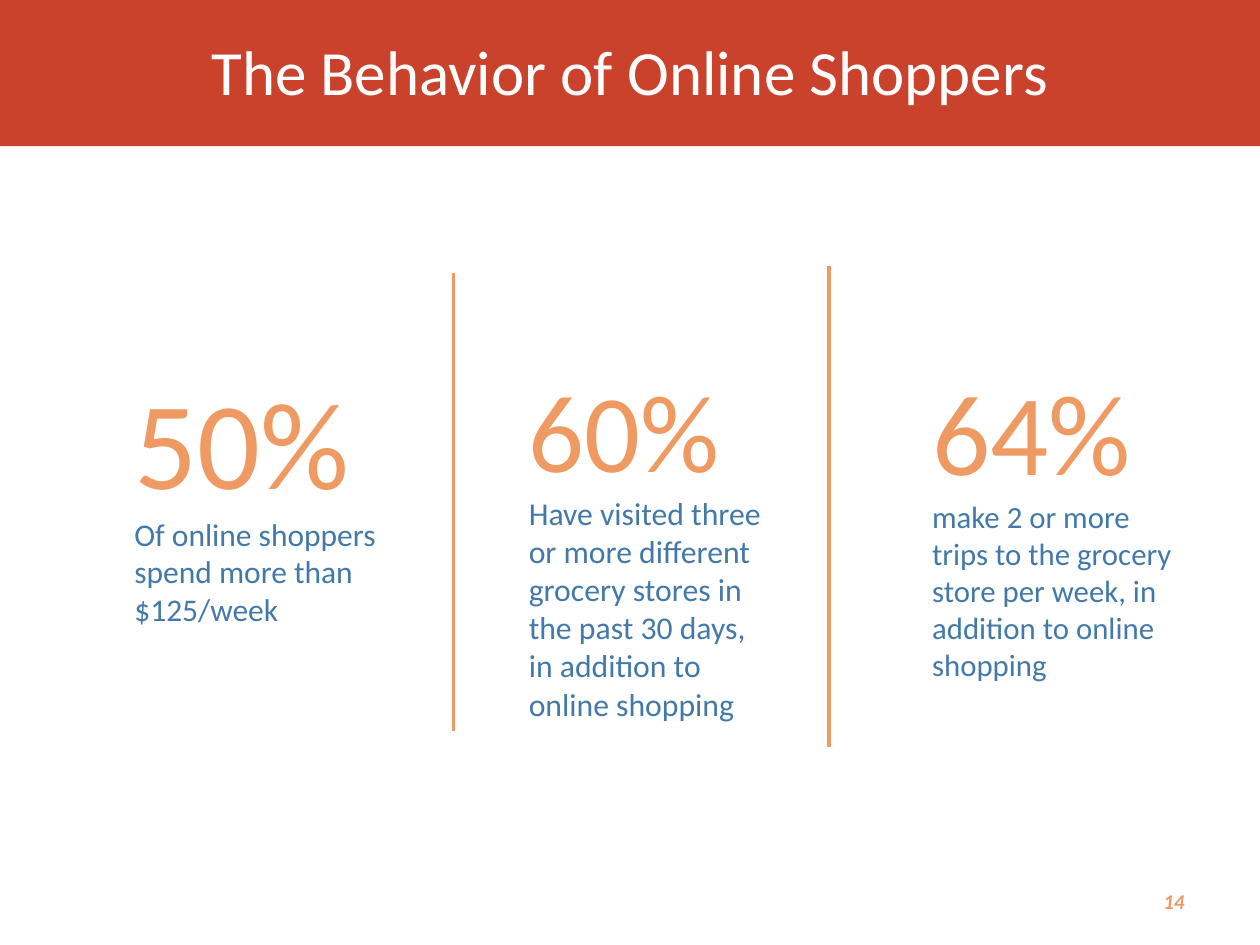
from lxml.etree import SubElement
from pptx import Presentation
from pptx.dml.color import RGBColor
from pptx.enum.shapes import MSO_CONNECTOR, MSO_SHAPE
from pptx.enum.text import MSO_ANCHOR, PP_ALIGN
from pptx.oxml.ns import qn
from pptx.util import Cm, Pt

HUES = {"red": "CA412C", "orange": "EE9A62", "blue": "4379A9", "white": "FFFFFF"}
FACE = "Calibri"
TITLE = "The Behavior of Online Shoppers"
PAGE = "14"
STATS = [
    ("50%", 71, "Of online shoppers spend more than $125/week", 18,
     (2.46, 7.37, 5.49, 5.54)),
    ("60%", 63.1, "Have visited three or more different grocery stores in "
     "the past 30 days, in addition to online shopping", 18.1,
     (10.41, 7.29, 5.44, 7.34)),
    ("64%", 65.7, "make 2 or more trips to the grocery store per week, "
     "in addition to online shopping", 17.6,
     (18.54, 7.26, 5.74, 6.07)),
]
RULES = [(9.14, 5.51, 14.73), (16.71, 5.36, 15.06)]


def hue(name):
    return RGBColor.from_string(HUES[name])


def write(slide, box, lines, anchor=MSO_ANCHOR.MIDDLE, align=PP_ALIGN.LEFT):
    frame = slide.shapes.add_textbox(*map(Cm, box)).text_frame
    frame.word_wrap = True
    frame.vertical_anchor = anchor
    if anchor == MSO_ANCHOR.TOP:
        frame.margin_top = 0
    for i, (text, size, tint) in enumerate(lines):
        para = frame.add_paragraph() if i else frame.paragraphs[0]
        para.text = text
        para.alignment = align
        font = para.font
        font.name, font.size = FACE, Pt(size)
        font.color.rgb = hue(tint)
    return frame.paragraphs[0]


def rule(slide, x, top, end):
    line = slide.shapes.add_connector(
        MSO_CONNECTOR.STRAIGHT, Cm(x), Cm(top), Cm(x), Cm(end))
    line.line.color.rgb = hue("orange")
    line.line.width = Pt(2)
    SubElement(line._element.spPr, qn("a:effectLst"))


def main():
    deck = Presentation()
    deck.slide_width, deck.slide_height = Cm(25.4), Cm(19.05)
    slide = deck.slides.add_slide(deck.slide_layouts[6])

    band = slide.shapes.add_shape(MSO_SHAPE.RECTANGLE, 0, 0, Cm(25.4), Cm(2.95))
    band.shadow.inherit = False
    band.fill.solid()
    band.fill.fore_color.rgb = hue("red")
    band.line.fill.background()

    head = write(slide, (0, 0.38, 25.4, 2.34), [(TITLE, 36, "white")],
                 align=PP_ALIGN.CENTER)
    head.line_spacing = Pt(36)

    for share, big, note, small, box in STATS:
        write(slide, box, [(share, big, "orange"), (note, small, "blue")],
              MSO_ANCHOR.TOP)
    for spot in RULES:
        rule(slide, *spot)

    page = write(slide, (18.21, 17.65, 5.92, 1.02), [(PAGE, 12, "orange")],
                 align=PP_ALIGN.RIGHT)
    page.font.bold = page.font.italic = True

    deck.save("out.pptx")


if __name__ == "__main__":
    main()
